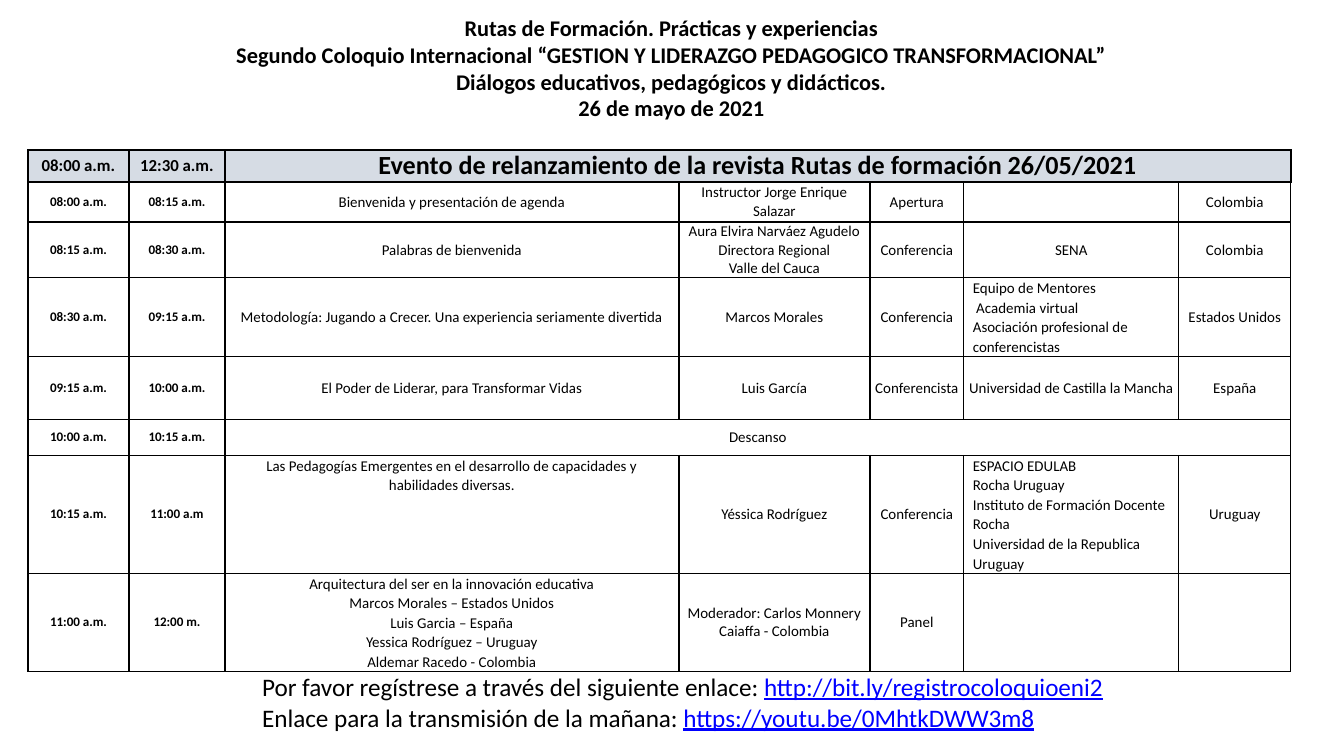
from lxml import etree
from pptx import Presentation
from pptx.dml.color import RGBColor
from pptx.enum.text import MSO_ANCHOR, MSO_AUTO_SIZE, PP_ALIGN
from pptx.oxml.ns import qn
from pptx.util import Emu, Pt

BLACK = RGBColor(0x00, 0x00, 0x00)
WHITE = RGBColor(0xFF, 0xFF, 0xFF)
HEADER_GREY = RGBColor(0xD6, 0xDC, 0xE4)
LINK_BLUE = RGBColor(0x00, 0x00, 0xFF)
FONT = "Calibri"
EMU_PER_PX = 914400 / 134.4

TITLE_LINES = [
    "Rutas de Formación. Prácticas y experiencias",
    "Segundo Coloquio Internacional “GESTION Y LIDERAZGO PEDAGOGICO TRANSFORMACIONAL”",
    "Diálogos educativos, pedagógicos y didácticos.",
    "26 de mayo de 2021",
]
COLUMN_WIDTHS = [101, 96, 454, 191, 94, 215, 112]
ROW_HEIGHTS = [32, 40, 56, 78, 63, 36, 118, 98]
AGENDA = [
    ["08:00 a.m.", "12:30 a.m.",
     "Evento de relanzamiento de la revista Rutas de formación 26/05/2021"],
    ["08:00 a.m.", "08:15 a.m.", "Bienvenida y presentación de agenda",
     "Instructor Jorge Enrique Salazar", "Apertura", "", "Colombia"],
    ["08:15 a.m.", "08:30 a.m.", "Palabras de bienvenida",
     "Aura Elvira Narváez Agudelo\nDirectora Regional\nValle del Cauca",
     "Conferencia", "SENA", "Colombia"],
    ["08:30 a.m.", "09:15 a.m.",
     "Metodología: Jugando a Crecer. Una experiencia seriamente divertida",
     "Marcos Morales", "Conferencia",
     "Equipo de Mentores\n Academia virtual\nAsociación profesional de conferencistas",
     "Estados Unidos"],
    ["09:15 a.m.", "10:00 a.m.", "El Poder de Liderar, para Transformar Vidas",
     "Luis García", "Conferencista", "Universidad de Castilla la Mancha", "España"],
    ["10:00 a.m.", "10:15 a.m.", "Descanso"],
    ["10:15 a.m.", "11:00 a.m",
     "Las Pedagogías Emergentes en el desarrollo de capacidades y habilidades diversas.",
     "Yéssica Rodríguez", "Conferencia",
     "ESPACIO EDULAB\nRocha Uruguay\nInstituto de Formación Docente Rocha\n"
     "Universidad de la Republica Uruguay", "Uruguay"],
    ["11:00 a.m.", "12:00 m.",
     "Arquitectura del ser en la innovación educativa\nMarcos Morales – Estados Unidos\n"
     "Luis Garcia – España\nYessica Rodríguez – Uruguay\nAldemar Racedo - Colombia",
     "Moderador: Carlos Monnery Caiaffa - Colombia", "Panel", "", ""],
]
TOP_ANCHORED = {(3, 5), (6, 2), (6, 5), (7, 2)}
LEFT_ALIGNED = {(3, 5), (6, 5)}
LINKS = [
    ("Por favor regístrese a través del siguiente enlace: ",
     "http://bit.ly/registrocoloquioeni2"),
    ("Enlace para la transmisión de la mañana: ", "https://youtu.be/0MhtkDWW3m8"),
]


def px(length):
    """Turn pixels into EMU."""
    return Emu(round(length * EMU_PER_PX))


def format_font(font, size, bold=False, color=BLACK):
    """Set the face, size, weight and colour of a font."""
    font.name = FONT
    font.size = Pt(size)
    font.bold = bold
    font.color.rgb = color


def set_margins(target, horizontal, vertical):
    """Set the inner margins of a cell or a text frame."""
    target.margin_left = target.margin_right = px(horizontal)
    target.margin_top = target.margin_bottom = px(vertical)


def set_borders(cell, width):
    """Draw a black line on each side of a cell."""
    properties = cell._tc.get_or_add_tcPr()
    for index, side in enumerate(("a:lnL", "a:lnR", "a:lnT", "a:lnB")):
        line = etree.Element(qn(side), w=str(Pt(width)))
        fill = etree.SubElement(line, qn("a:solidFill"))
        etree.SubElement(fill, qn("a:srgbClr"), val=str(BLACK))
        properties.insert(index, line)


def add_title(slide, left, top, width, height):
    """Fill the title placeholder with the heading of the event."""
    title = slide.shapes.title
    title.left, title.top, title.width, title.height = map(px, (left, top, width, height))
    frame = title.text_frame
    frame.text = "\n".join(TITLE_LINES)
    frame.auto_size = MSO_AUTO_SIZE.NONE
    frame.vertical_anchor = MSO_ANCHOR.TOP
    set_margins(frame, 9, 5)
    for paragraph in frame.paragraphs:
        paragraph.alignment = PP_ALIGN.CENTER
        format_font(paragraph.font, 12, bold=True)


def fill_cell(cell, text, row, column):
    """Write and format one cell of the agenda."""
    is_header = row == 0
    is_time = column < 2
    on_top = (row, column) in TOP_ANCHORED
    size = (9 if is_time else 14) if is_header else (7 if is_time else 8)
    cell.text = text
    cell.fill.solid()
    cell.fill.fore_color.rgb = HEADER_GREY if is_header else WHITE
    cell.vertical_anchor = MSO_ANCHOR.TOP if on_top else MSO_ANCHOR.MIDDLE
    set_margins(cell, 9 if on_top else 0, 0)
    for paragraph in cell.text_frame.paragraphs:
        paragraph.alignment = PP_ALIGN.LEFT if (row, column) in LEFT_ALIGNED else PP_ALIGN.CENTER
        if on_top:
            paragraph.line_spacing = 1.07
        format_font(paragraph.font, size, bold=is_header or is_time)


def add_agenda(slide, left, top):
    """Add the agenda table, merging the rows that hold one wide entry."""
    frame = slide.shapes.add_table(
        len(ROW_HEIGHTS), len(COLUMN_WIDTHS), px(left), px(top),
        px(sum(COLUMN_WIDTHS)), px(sum(ROW_HEIGHTS)))
    table = frame.table
    table.first_row = table.horz_banding = False
    for column, width in zip(table.columns, COLUMN_WIDTHS):
        column.width = px(width)
    for row, height in zip(table.rows, ROW_HEIGHTS):
        row.height = px(height)
    last_column = len(COLUMN_WIDTHS) - 1
    for row, texts in enumerate(AGENDA):
        for column, text in enumerate(texts):
            fill_cell(table.cell(row, column), text, row, column)
        if len(texts) <= last_column:
            table.cell(row, len(texts) - 1).merge(table.cell(row, last_column))
        for column in range(last_column + 1):
            set_borders(table.cell(row, column), 1 if row == 0 and column > 1 else 0.75)


def add_links(slide, left, top, width, height):
    """Add the registration and broadcast addresses."""
    frame = slide.shapes.add_textbox(*map(px, (left, top, width, height))).text_frame
    frame.word_wrap = True
    for index, (label, address) in enumerate(LINKS):
        paragraph = frame.add_paragraph() if index else frame.paragraphs[0]
        for text, color in ((label, BLACK), (address, LINK_BLUE)):
            run = paragraph.add_run()
            run.text = text
            format_font(run.font, 13.5, color=color)
            run.font.underline = color == LINK_BLUE


def main():
    """Build the slide and save it."""
    presentation = Presentation()
    presentation.slide_width, presentation.slide_height = px(1344), px(756)
    slide = presentation.slides.add_slide(presentation.slide_layouts[5])
    add_title(slide, 28, 9, 1287, 118)
    add_agenda(slide, 28, 150)
    add_links(slide, 249, 665, 910, 75)
    presentation.save("out.pptx")


if __name__ == "__main__":
    main()
